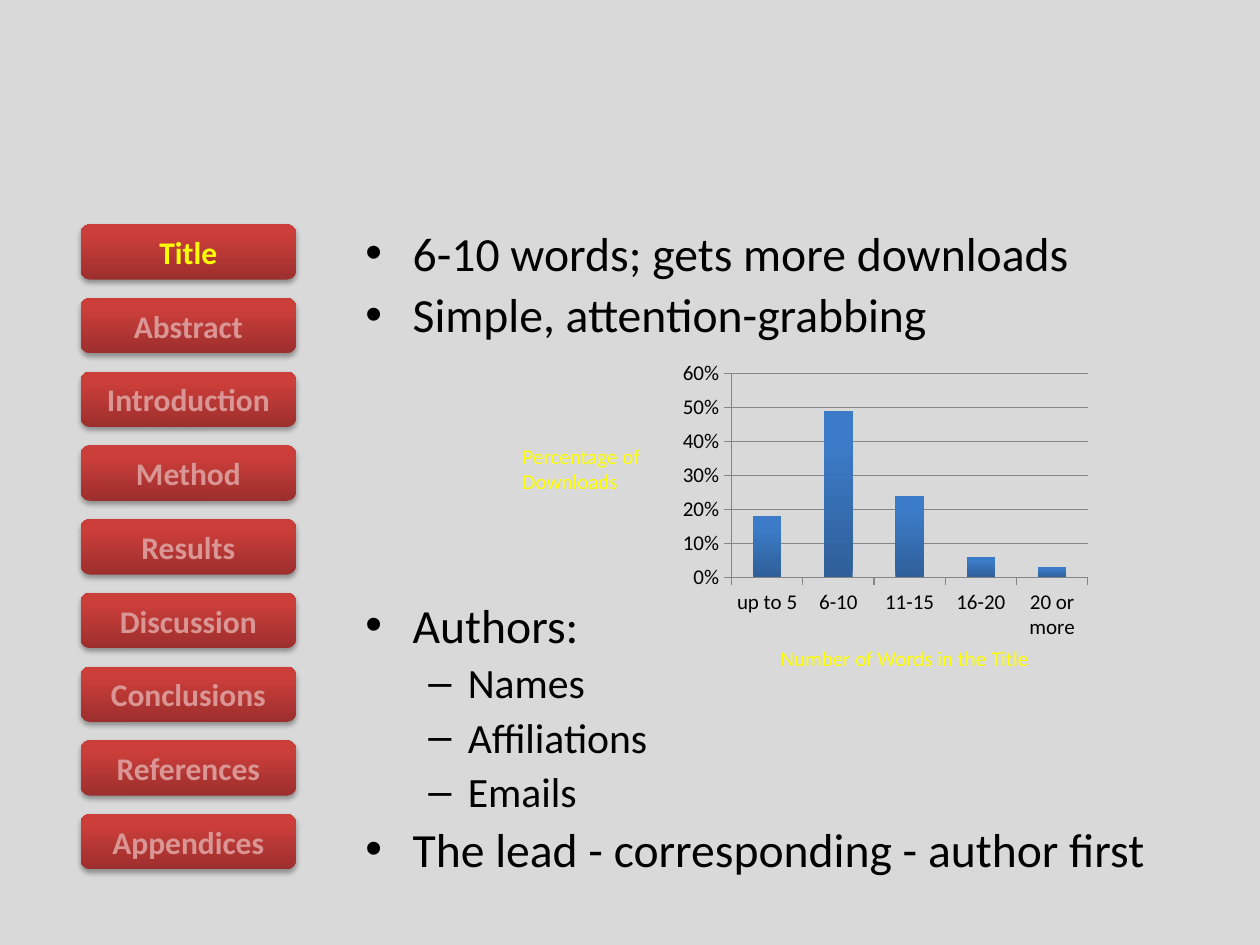
from dataclasses import dataclass
from pptx import Presentation
from pptx.chart.data import CategoryChartData
from pptx.dml.color import RGBColor
from pptx.enum.chart import XL_CHART_TYPE, XL_TICK_MARK
from pptx.enum.shapes import MSO_SHAPE
from pptx.enum.text import MSO_ANCHOR, MSO_AUTO_SIZE, PP_ALIGN
from pptx.oxml import parse_xml
from pptx.oxml.ns import nsdecls
from pptx.util import Inches, Pt

COLUMN = XL_CHART_TYPE.COLUMN_CLUSTERED
OUT = XL_TICK_MARK.OUTSIDE
ROUND = MSO_SHAPE.ROUNDED_RECTANGLE
MIDDLE = MSO_ANCHOR.MIDDLE
NOFIT = MSO_AUTO_SIZE.NONE
GROW = MSO_AUTO_SIZE.SHAPE_TO_FIT_TEXT
CENTER = PP_ALIGN.CENTER

WIDE, HIGH = 10, 7.5


@dataclass(frozen=True)
class Theme:
    font: str = "Calibri"
    back: str = "D9D9D9"
    ink: str = "000000"
    glow: str = "FFFF00"
    dim: str = "D99694"
    grid: str = "868686"
    red: tuple = ("9C2F2D", "CB3E3A")
    blue: tuple = ("2E5F99", "3C7BC7")
    list: tuple = (27.2, 23.8)
    tab: float = 18
    note: float = 12


LOOK = Theme()
TABS = ["Title", "Abstract", "Introduction", "Method", "Results",
        "Discussion", "Conclusions", "References", "Appendices"]
LINES = [
    (0, "6-10 words; gets more downloads", 2.4),
    (0, "Simple, attention-grabbing", 2.4),
    (0, "Authors:", 145),
    (1, "Names", 2.4),
    (1, "Affiliations", 2.4),
    (1, "Emails", 2.4),
    (0, "The lead - corresponding - author first", 2.4),
]
SHARES = {"up to 5": 0.18, "6-10": 0.49, "11-15": 0.24,
          "16-20": 0.06, "20 or more": 0.03}


def put(item, values):
    for name, value in values.items():
        setattr(item, name, value)


def style(font, size, tint, bold=False):
    put(font, {"name": LOOK.font, "size": Pt(size), "bold": bold})
    font.color.rgb = RGBColor.from_string(tint)


def inner(box, x, y, w, h):
    left, top, wide, high = box
    return left + x * wide, top + y * high, w * wide, h * high


def units(box):
    return [Inches(part) for part in box]


def shade(fill, tints):
    fill.gradient()
    fill.gradient_angle = 90
    for stop, tint, spot in zip(fill.gradient_stops, tints, (0, 0.8)):
        stop.color.rgb = RGBColor.from_string(tint)
        stop.position = spot


def shadow(shape):
    shape._element.spPr.append(parse_xml(
        f'<a:effectLst {nsdecls("a")}>'
        '<a:outerShdw blurRad="40000" dist="23000" dir="5400000" rotWithShape="0">'
        '<a:srgbClr val="000000"><a:alpha val="35000"/></a:srgbClr>'
        '</a:outerShdw></a:effectLst>'))


def menu(slide, box, names, now):
    gap = 0.33
    unit = 1 / (len(names) + (len(names) - 1) * gap)
    for row, name in enumerate(names):
        place = inner(box, 0, row * unit * (1 + gap), 1, unit)
        tab = slide.shapes.add_shape(ROUND, *units(place))
        shade(tab.fill, LOOK.red)
        tab.line.fill.background()
        shadow(tab)
        frame = tab.text_frame
        put(frame, {"text": name, "vertical_anchor": MIDDLE, "word_wrap": True})
        para = frame.paragraphs[0]
        para.alignment = CENTER
        style(para.runs[0].font, LOOK.tab,
              LOOK.glow if name == now else LOOK.dim, True)


def body(slide, box, lines):
    hold = slide.placeholders[1]
    put(hold, dict(zip(("left", "top", "width", "height"), units(box))))
    frame = hold.text_frame
    frame.text = "\n".join(text for _, text, _ in lines)
    frame.auto_size = NOFIT
    for para, (level, _, space) in zip(frame.paragraphs, lines):
        put(para, {"level": level, "space_before": Pt(space)})
        style(para.runs[0].font, LOOK.list[level], LOOK.ink)


def note(slide, box, text):
    label = slide.shapes.add_textbox(*units(box))
    frame = label.text_frame
    put(frame, {"text": text, "word_wrap": False, "auto_size": GROW})
    for para in frame.paragraphs:
        style(para.runs[0].font, LOOK.note, LOOK.glow)


def graph(slide, box, shares):
    data = CategoryChartData(number_format="0%")
    data.categories = list(shares)
    data.add_series("Series 1", list(shares.values()))
    place = inner(box, 0.28, 0, 0.72, 0.9)
    chart = slide.shapes.add_chart(COLUMN, *units(place), data).chart
    put(chart, {"has_title": False, "has_legend": False})
    style(chart.font, LOOK.note, LOOK.ink)
    plot = chart.plots[0]
    put(plot, {"gap_width": 150, "vary_by_categories": False})
    shade(plot.series[0].format.fill, LOOK.blue)
    value, group = chart.value_axis, chart.category_axis
    put(value, {"minimum_scale": 0, "maximum_scale": 0.6, "major_unit": 0.1,
                "has_major_gridlines": True})
    put(value.tick_labels, {"number_format": "0%",
                            "number_format_is_linked": False})
    for axis in (value, group):
        axis.major_tick_mark = OUT
    for part in (value, group, value.major_gridlines):
        part.format.line.width = Pt(0.75)
        part.format.line.color.rgb = RGBColor.from_string(LOOK.grid)
    note(slide, inner(box, 0, 0.255, 0.25, 0.2), "Percentage of\nDownloads")
    note(slide, inner(box, 0.44, 0.88, 0.47, 0.12), "Number of Words in the Title")


def main():
    deck = Presentation()
    put(deck, {"slide_width": Inches(WIDE), "slide_height": Inches(HIGH)})
    slide = deck.slides.add_slide(deck.slide_layouts[1])
    fill = slide.background.fill
    fill.solid()
    fill.fore_color.rgb = RGBColor.from_string(LOOK.back)
    title = slide.shapes.title._element
    title.getparent().remove(title)
    page = (0, 0, WIDE, HIGH)
    body(slide, inner(page, 0.28, 0.23, 0.7, 0.67), LINES)
    menu(slide, (0.64, 1.78, 1.71, 5.12), TABS, "Title")
    graph(slide, (4.05, 2.82, 4.65, 2.56), SHARES)
    deck.save("out.pptx")


if __name__ == "__main__":
    main()
